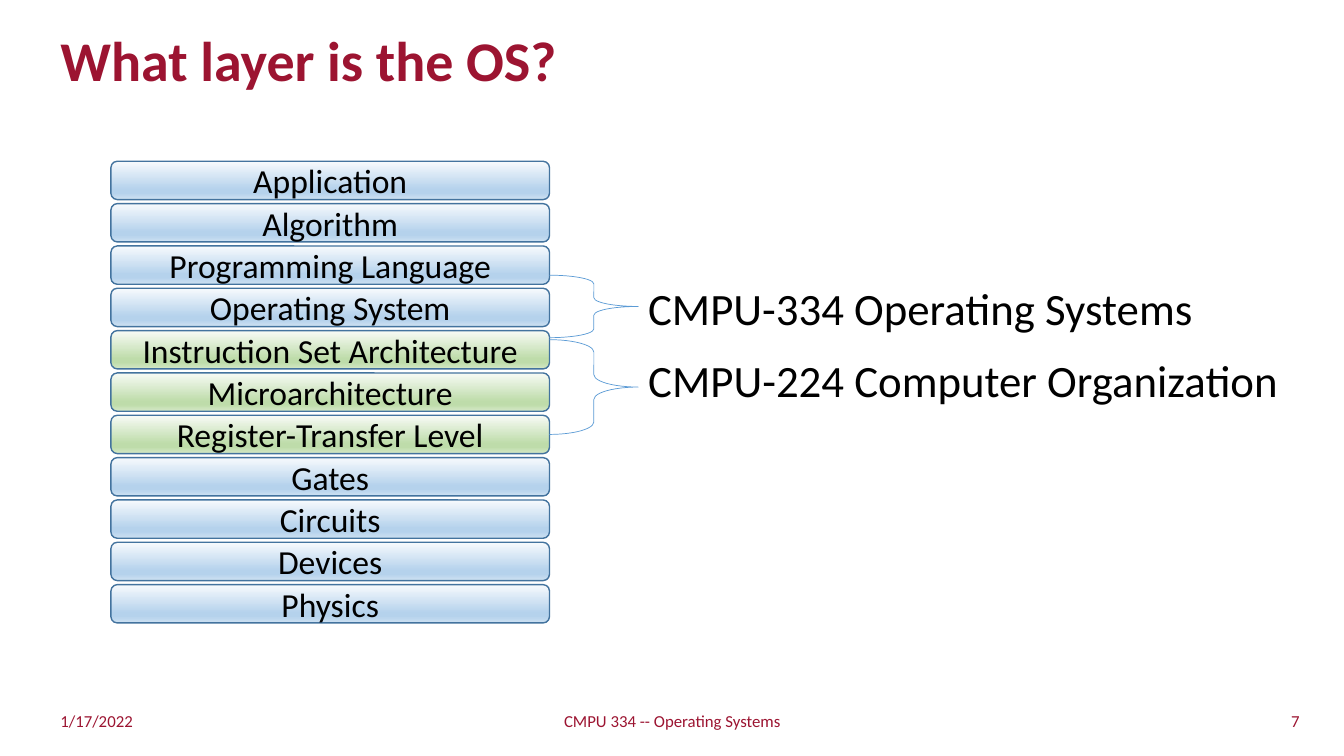
"""Build the slide that places the operating system among the computing layers."""
from lxml import etree
from pptx import Presentation
from pptx import util as u
from pptx.dml.color import RGBColor
from pptx.enum import shapes, text
from pptx.oxml.ns import qn

TITLE = "What layer is the OS?"
BLUE = [(0, "F7FAFD"), (74, "B5D2EC"), (83, "B5D2EC"), (100, "CEE1F2")]
GREEN = [(0, "F8FBF6"), (74, "BEDCAA"), (83, "BEDCAA"), (100, "D4E8C6")]
LAYERS = [
    ("Application", BLUE),
    ("Algorithm", BLUE),
    ("Programming Language", BLUE),
    ("Operating System", BLUE),
    ("Instruction Set Architecture", GREEN),
    ("Microarchitecture", GREEN),
    ("Register-Transfer Level", GREEN),
    ("Gates", BLUE),
    ("Circuits", BLUE),
    ("Devices", BLUE),
    ("Physics", BLUE),
]
COURSES = [
    ("CMPU-224 Computer Organization", 337, 94, 345, 652),
    ("CMPU-334 Operating Systems", 273, 62, 274, 566),
]
LEFT, CENTER, RIGHT = text.PP_ALIGN.LEFT, text.PP_ALIGN.CENTER, text.PP_ALIGN.RIGHT
FOOTERS = [
    ("1/17/2022", 50, 376, LEFT),
    ("CMPU 334 -- Operating Systems", 442, 450, CENTER),
    ("7", 923, 376, RIGHT),
]
CRIMSON, BLACK, EDGE, BRACE = "9C1431", "000000", "43739E", "5B9BD5"
LAYER_X, LAYER_Y, LAYER_W, LAYER_H, LAYER_STEP = 110, 160, 435, 38, 42
BRACE_W = 88


def px(n):
    return u.Emu(n * 9144)


def box(*lengths):
    return [px(n) for n in lengths]


def rgb(value):
    return RGBColor.from_string(value)


def write(sp, words, size, color, align=LEFT, bold=False, wrap=True,
          anchor=text.MSO_ANCHOR.MIDDLE):
    tf = sp.text_frame
    tf.word_wrap = wrap
    tf.auto_size = text.MSO_AUTO_SIZE.NONE if wrap else text.MSO_AUTO_SIZE.SHAPE_TO_FIT_TEXT
    tf.vertical_anchor = anchor
    p = tf.paragraphs[0]
    p.alignment = align
    r = p.add_run()
    r.text = words
    r.font.name, r.font.size, r.font.bold = "Calibri", u.Pt(size), bold
    r.font.color.rgb = rgb(color)
    return p


def add_outlined(s, kind, place, color, width):
    sp = s.shapes.add_shape(kind, *box(*place))
    sp.shadow.inherit = False
    sp.line.color.rgb = rgb(color)
    sp.line.width = u.Pt(width)
    return sp


def fill_gradient(sp, stops):
    sp.fill.gradient()
    sp.fill.gradient_angle = 270
    gs_list = next(sp.element.iter(qn("a:gsLst")))
    for gs in list(gs_list):
        gs_list.remove(gs)
    for percent, color in stops:
        gs = etree.SubElement(gs_list, qn("a:gs"), pos=str(percent * 1000))
        etree.SubElement(gs, qn("a:srgbClr"), val=color)


def main():
    prs = Presentation()
    prs.slide_width, prs.slide_height = box(1333, 750)
    s = prs.slides.add_slide(prs.slide_layouts[5])

    title = s.shapes.title
    title.left, title.top, title.width, title.height = box(50, 25, 1145, 75)
    write(title, TITLE, 40, CRIMSON, bold=True).line_spacing = 0.9

    for i, (name, stops) in enumerate(LAYERS):
        place = LAYER_X, LAYER_Y + i * LAYER_STEP, LAYER_W, LAYER_H
        sp = add_outlined(s, shapes.MSO_SHAPE.ROUNDED_RECTANGLE, place, EDGE, 1)
        fill_gradient(sp, stops)
        write(sp, name, 24, BLACK, CENTER)

    brace_x = LAYER_X + LAYER_W
    for name, brace_y, brace_h, label_y, label_w in COURSES:
        place = brace_x, brace_y, BRACE_W, brace_h
        sp = add_outlined(s, shapes.MSO_SHAPE.RIGHT_BRACE, place, BRACE, 0.5)
        sp.fill.background()
        sp.adjustments[0], sp.adjustments[1] = 0.14, 0.5
        label = s.shapes.add_textbox(*box(brace_x + BRACE_W, label_y, label_w, 64))
        write(label, name, 32, BLACK, wrap=False, anchor=text.MSO_ANCHOR.TOP)

    for words, x, width, align in FOOTERS:
        footer = s.shapes.add_textbox(*box(x, 695, width, 40))
        write(footer, words, 12, CRIMSON, align)

    prs.save("out.pptx")


if __name__ == "__main__":
    main()
